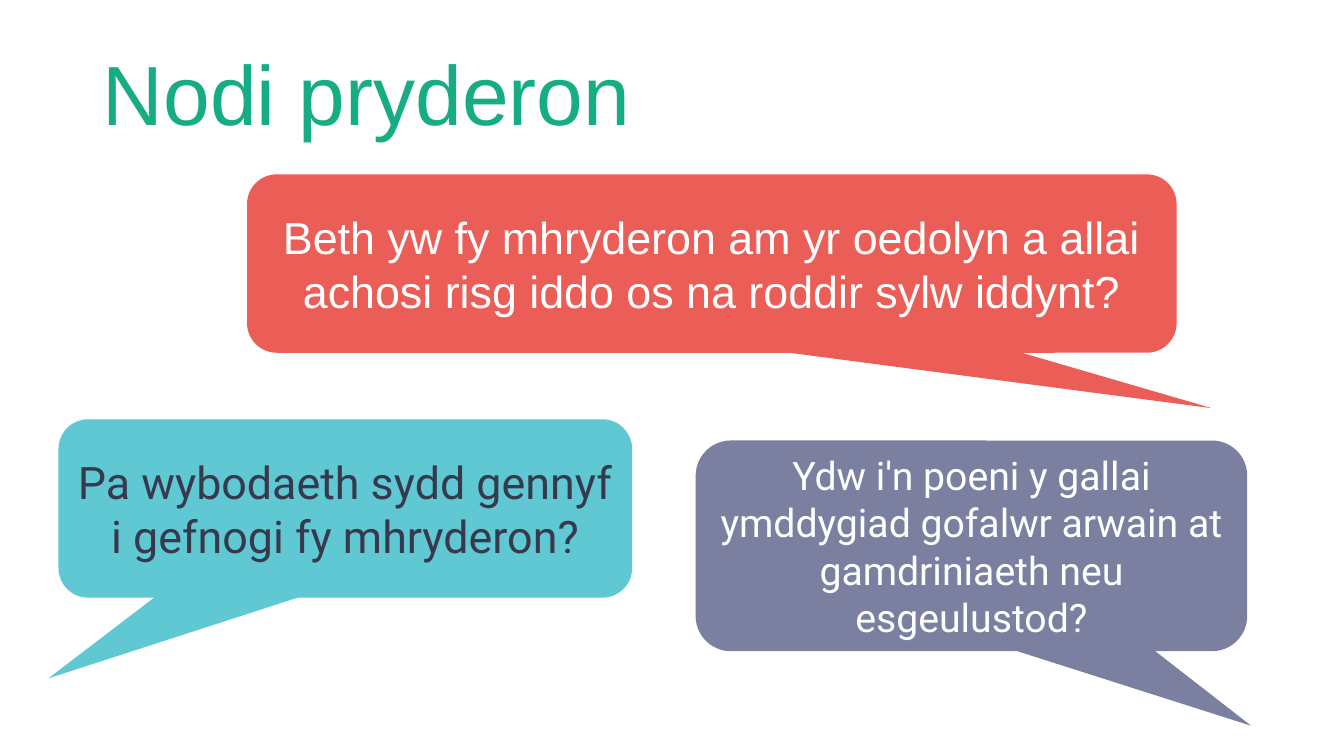
from pptx import Presentation
from pptx.dml.color import RGBColor
from pptx.enum.shapes import MSO_SHAPE as Shape
from pptx.enum.text import MSO_ANCHOR as Anchor, PP_ALIGN as Align
from pptx.util import Pt

PX = 9144
COLOURS = {
    "green": "16AD85",
    "coral": "EB5E57",
    "teal": "60C8D3",
    "violet": "7B7FA0",
    "ink": "37394C",
    "white": "FFFFFF",
}


def colour(name):
    return RGBColor.from_string(COLOURS[name])


def px(*lengths):
    return [length * PX for length in lengths]


def write(box, text, font="Arial", size=32, ink="white",
          align=Align.CENTER, anchor=Anchor.MIDDLE, spacing=1.0):
    frame = box.text_frame
    frame.word_wrap = True
    frame.vertical_anchor = anchor
    para = frame.paragraphs[0]
    para.alignment = align
    para.line_spacing = spacing
    span = para.add_run()
    span.text = text
    span.font.name = font
    span.font.size = Pt(size)
    span.font.color.rgb = colour(ink)


def add_title(page, text):
    box = page.shapes.add_textbox(*px(92, 2, 1150, 145))
    write(box, text, size=60, ink="green", align=Align.LEFT,
          anchor=Anchor.BOTTOM, spacing=0.9)


def add_bubble(page, place, tip, fill, text, **style):
    bubble = page.shapes.add_shape(Shape.ROUNDED_RECTANGULAR_CALLOUT, *px(*place))
    bubble.shadow.inherit = False
    bubble.fill.solid()
    bubble.fill.fore_color.rgb = colour(fill)
    bubble.line.fill.background()
    left, top, width, height = place
    tip_x, tip_y = tip
    bubble.adjustments[0] = (tip_x - left) / width - 0.5
    bubble.adjustments[1] = (tip_y - top) / height - 0.5
    write(bubble, text, **style)


def main():
    deck = Presentation()
    deck.slide_width, deck.slide_height = px(1333, 750)
    page = deck.slides.add_slide(deck.slide_layouts[6])
    add_title(page, "Nodi pryderon")
    add_bubble(page, (245, 173, 922, 177), (1202, 405), "coral",
               "Beth yw fy mhryderon am yr oedolyn a allai achosi risg iddo "
               "os na roddir sylw iddynt?")
    add_bubble(page, (58, 416, 569, 177), (48, 673), "teal",
               "Pa wybodaeth sydd gennyf i gefnogi fy mhryderon?",
               font="Roboto", ink="ink")
    add_bubble(page, (690, 437, 547, 209), (1241, 720), "violet",
               "Ydw i'n poeni y gallai ymddygiad gofalwr arwain at "
               "gamdriniaeth neu esgeulustod?",
               font="Roboto", size=28)
    deck.save("out.pptx")


if __name__ == "__main__":
    main()
